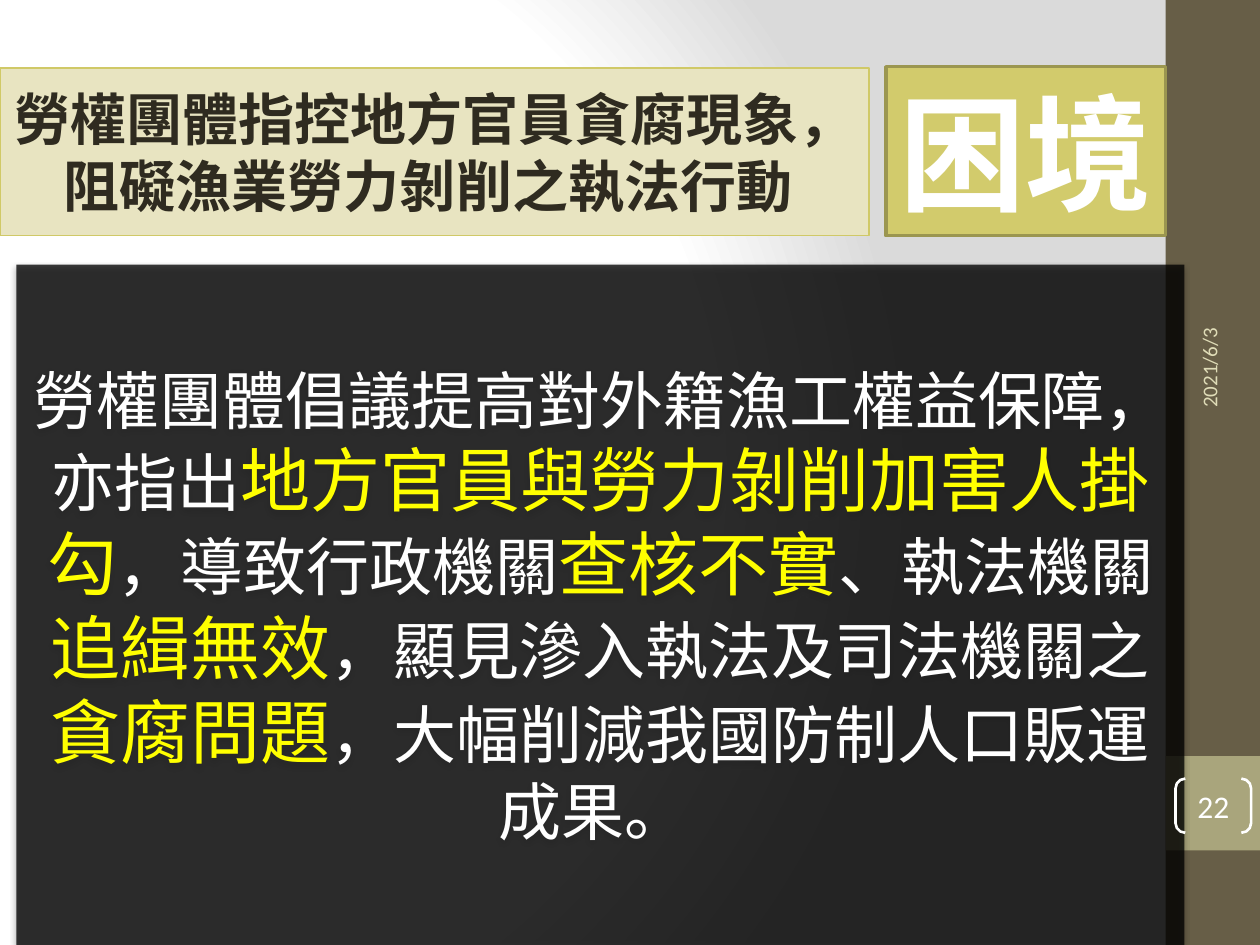
from lxml.etree import SubElement
from pptx import Presentation
from pptx.dml.color import RGBColor
from pptx.enum.shapes import MSO_SHAPE
from pptx.enum.text import MSO_ANCHOR, MSO_AUTO_SIZE, PP_ALIGN
from pptx.oxml import parse_xml
from pptx.oxml.ns import nsdecls, qn
from pptx.util import Inches, Pt

WIDTH, HEIGHT = 10, 7.5
SIDEBAR_LEFT = WIDTH * 0.925
SIDEBAR_WIDTH = WIDTH - SIDEBAR_LEFT
CJK, LATIN = "Noto Sans CJK SC", "Calibri"
WHITE, YELLOW = "FFFFFF", "FFFF00"

TITLE = "勞權團體指控地方官員貪腐現象，阻礙漁業勞力剝削之執法行動 "
# Plain and highlighted phrases alternate
PHRASES = [
    "勞權團體倡議提高對外籍漁工權益保障，亦指出",
    "地方官員與勞力剝削加害人掛勾",
    "，導致行政機關",
    "查核不實",
    "、執法機關",
    "追緝無效",
    "，顯見滲入執法及司法機關之",
    "貪腐問題",
    "，大幅削減我國防制人口販運成果。 ",
]


def color(hex_value):
    return RGBColor.from_string(hex_value)


def apply(target, values):
    for key, value in values.items():
        setattr(target, key, value)


def place(shape, left, top, width, height):
    apply(shape, {"left": Inches(left), "top": Inches(top),
                  "width": Inches(width), "height": Inches(height)})


def paint(shape, fill=None, line=None, line_width=1):
    if fill:
        shape.fill.solid()
        shape.fill.fore_color.rgb = color(fill)
    else:
        shape.fill.background()
    if line:
        shape.line.color.rgb = color(line)
        shape.line.width = Pt(line_width)
    else:
        shape.line.fill.background()
    shape.shadow.inherit = False


def add_block(slide, kind, box, **colors):
    block = slide.shapes.add_shape(kind, *map(Inches, box))
    paint(block, **colors)
    return block


def use_placeholder(slide, index, box, **colors):
    """Move a template placeholder to the front and format it."""
    holder = slide.placeholders[index]
    slide.shapes._spTree.append(holder._element)
    place(holder, *box)
    paint(holder, **colors)
    return holder


def write(shape, runs, font=CJK, bold=False, inset=0.08,
          anchor=MSO_ANCHOR.MIDDLE, align=PP_ALIGN.CENTER):
    """Write one paragraph of (text, size, color) runs."""
    margin = Inches(inset)
    frame = shape.text_frame
    apply(frame, {"word_wrap": True, "auto_size": MSO_AUTO_SIZE.NONE,
                  "vertical_anchor": anchor,
                  "margin_left": margin, "margin_right": margin,
                  "margin_top": margin, "margin_bottom": margin})
    paragraph = frame.paragraphs[0]
    apply(paragraph, {"alignment": align, "space_before": Pt(0)})
    for text, size, text_color in runs:
        run = paragraph.add_run()
        run.text = text
        apply(run.font, {"name": font, "size": Pt(size), "bold": bold})
        run.font.color.rgb = color(text_color)
        SubElement(run._r.get_or_add_rPr(), qn("a:ea"), typeface=font)
    return paragraph


def remove_bullet(paragraph):
    properties = paragraph._p.get_or_add_pPr()
    properties.set("marL", "0")
    properties.set("indent", "0")
    SubElement(properties, qn("a:buNone"))


def set_opacity(shape, percent):
    fill_color = shape._element.spPr.find(qn("a:solidFill"))[0]
    SubElement(fill_color, qn("a:alpha"), val=str(percent * 1000))


def add_shadow(shape, blur, distance, percent):
    effects = shape._element.spPr.find(qn("a:effectLst"))
    shadow = SubElement(effects, qn("a:outerShdw"), blurRad=str(Pt(blur)),
                        dist=str(Pt(distance)), dir="5400000", rotWithShape="0")
    shadow_color = SubElement(shadow, qn("a:srgbClr"), val="000000")
    SubElement(shadow_color, qn("a:alpha"), val=str(percent * 1000))


def set_background(slide, stops):
    slide.background.fill.solid()
    solid = slide.background._cSld.find(".//" + qn("a:solidFill"))
    stop_xml = "".join(
        f'<a:gs pos="{share * 1000}"><a:srgbClr val="{value}"/></a:gs>'
        for share, value in stops)
    gradient = parse_xml(
        f'<a:gradFill {nsdecls("a")} rotWithShape="1"><a:gsLst>{stop_xml}</a:gsLst>'
        '<a:path path="circle"><a:fillToRect l="20000" t="50000" r="100000" b="50000"/>'
        '</a:path></a:gradFill>')
    solid.getparent().replace(solid, gradient)


def main():
    deck = Presentation()
    deck.slide_width, deck.slide_height = Inches(WIDTH), Inches(HEIGHT)
    slide = deck.slides.add_slide(deck.slide_layouts[1])
    set_background(slide, [(0, WHITE), (75, WHITE), (100, "DADADA")])

    # Sidebar with its page number band
    add_block(slide, MSO_SHAPE.RECTANGLE,
              (SIDEBAR_LEFT, 0, SIDEBAR_WIDTH, HEIGHT), fill="675E47")
    add_block(slide, MSO_SHAPE.RECTANGLE,
              (SIDEBAR_LEFT, HEIGHT * 0.8, SIDEBAR_WIDTH, HEIGHT * 0.1), fill="A9A57C")

    # Topic tag and title
    topic = add_block(slide, MSO_SHAPE.RECTANGLE, (7.03, 0.53, 2.22, 1.34),
                      fill="D2CB6C", line="9B9650", line_width=2)
    write(topic, [("困境", 72, WHITE)], bold=True)
    title = use_placeholder(slide, 0, (0, 0.54, 6.9, 1.33),
                            fill="E8E4C1", line="D0C967")
    write(title, [(TITLE, 32, "2F2B20")], bold=True, inset=0.04)

    # Statement panel
    statement = use_placeholder(slide, 1, (0.13, 2.1, 9.27, 5.4), fill="000000")
    set_opacity(statement, 77)
    add_shadow(statement, blur=3.1, distance=1.8, percent=35)
    looks = [(36, WHITE), (40, YELLOW)]
    remove_bullet(write(statement, [(phrase, *looks[i % 2])
                                    for i, phrase in enumerate(PHRASES)]))

    # Date, reading upwards
    date = slide.shapes.add_textbox(*map(Inches, (8.26, 1.8, 2.67, 0.4)))
    date.rotation = 270
    write(date, [("2021/6/3", 12, "DFDCB7")], font=LATIN, inset=0.1,
          align=PP_ALIGN.LEFT)

    # Page number in brackets
    page = add_block(slide, MSO_SHAPE.DOUBLE_BRACKET, (9.33, 6.18, 0.6, 0.43),
                     line=WHITE, line_width=1.5)
    page.adjustments[0] = 0.18
    write(page, [("22", 18, WHITE)], font=LATIN, inset=0)

    deck.save("out.pptx")


if __name__ == "__main__":
    main()
